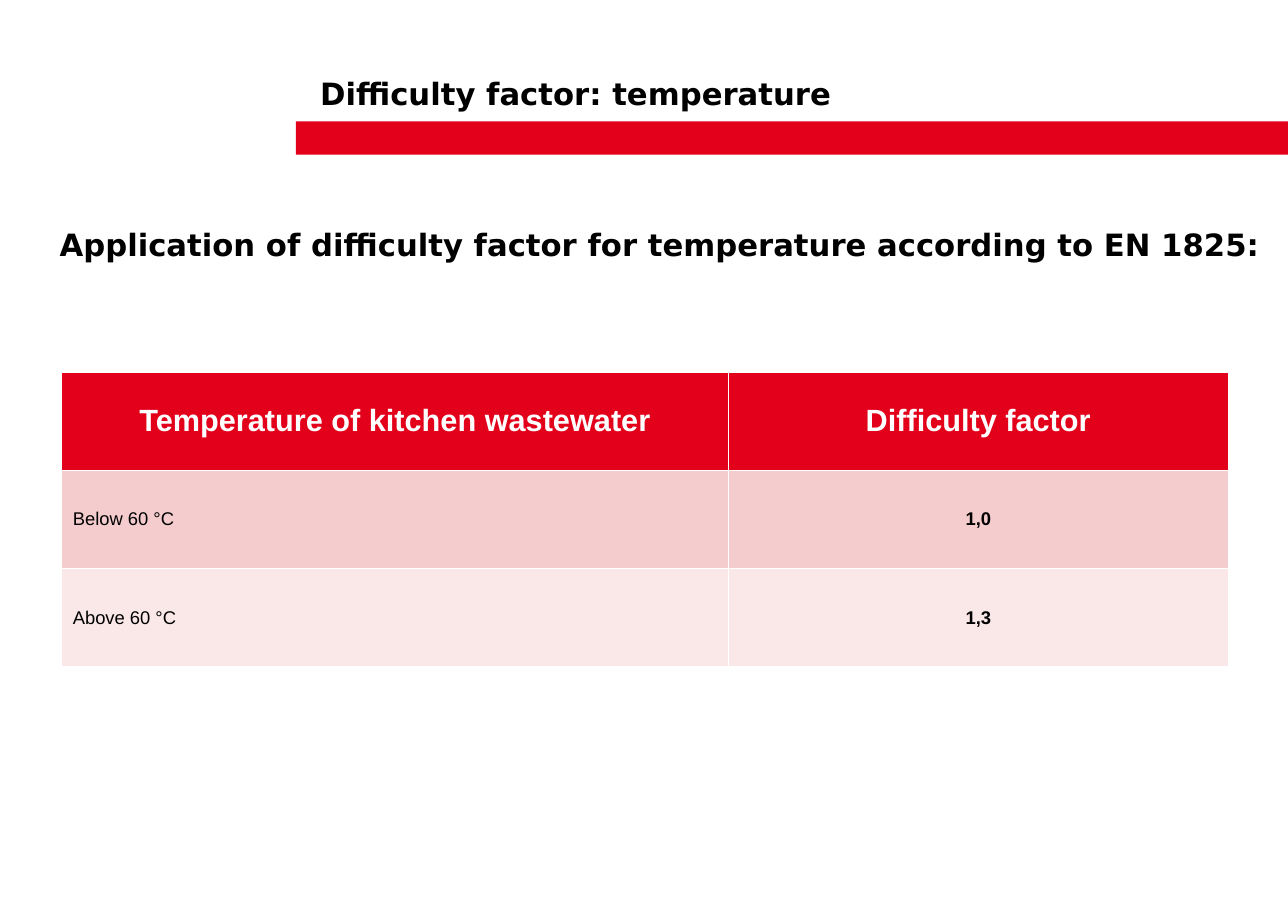
from dataclasses import dataclass

from pptx import Presentation
from pptx.dml.color import RGBColor
from pptx.enum.shapes import MSO_SHAPE as Preset
from pptx.enum.text import MSO_ANCHOR as Anchor, MSO_AUTO_SIZE as AutoSize, PP_ALIGN as Align
from pptx.util import Inches, Pt


@dataclass(frozen=True)
class Theme:
    red: str = "E2001A"
    rows: tuple = ("F4CCCD", "FAE7E8")
    ink: str = "000000"
    white: str = "FFFFFF"
    heading_font: str = "DejaVu Sans"
    table_font: str = "Arial"
    heading_size: int = 20
    entry_size: int = 12


THEME = Theme()
COLUMN_WIDTHS = (6.04, 4.53)
ROW_HEIGHT = 0.89
FACTORS = (
    ("Temperature of kitchen wastewater", "Difficulty factor"),
    ("Below 60 °C", "1,0"),
    ("Above 60 °C", "1,3"),
)


def paint(target, color):
    target.fill.solid()
    target.fill.fore_color.rgb = RGBColor.from_string(color)


def style_text(paragraph, font_name, size, color, bold, align):
    paragraph.alignment = align
    for run in paragraph.runs:
        run.font.name = font_name
        run.font.size = Pt(size)
        run.font.bold = bold
        run.font.color.rgb = RGBColor.from_string(color)


def set_heading(heading, text, anchor):
    frame = heading.text_frame
    frame.text = text
    frame.word_wrap = True
    frame.auto_size = AutoSize.NONE
    frame.vertical_anchor = anchor
    paragraph = frame.paragraphs[0]
    paragraph.line_spacing = 1.1
    style_text(paragraph, THEME.heading_font, THEME.heading_size, THEME.ink, True, Align.LEFT)


def add_red_bar(slide):
    bar = slide.shapes.add_shape(
        Preset.RECTANGLE, Inches(2.68), Inches(1.1), Inches(8.99), Inches(0.3))
    bar.shadow.inherit = False
    paint(bar, THEME.red)
    bar.line.fill.background()


def set_title(slide, text):
    title = slide.shapes.title
    title.left, title.top = Inches(2.8), Inches(0.4)
    title.width, title.height = Inches(8.86), Inches(0.86)
    set_heading(title, text, Anchor.MIDDLE)


def add_subtitle(slide, text):
    subtitle = slide.shapes.add_textbox(
        Inches(0.54), Inches(1.81), Inches(10.91), Inches(0.57))
    frame = subtitle.text_frame
    frame.margin_left = frame.margin_right = frame.margin_top = frame.margin_bottom = 0
    set_heading(subtitle, text, Anchor.BOTTOM)


def fill_cell(cell, text, row, column):
    is_header = row == 0
    cell.text_frame.text = text
    cell.vertical_anchor = Anchor.MIDDLE
    paint(cell, THEME.red if is_header else THEME.rows[(row - 1) % len(THEME.rows)])
    style_text(
        cell.text_frame.paragraphs[0],
        THEME.table_font,
        THEME.heading_size if is_header else THEME.entry_size,
        THEME.white if is_header else THEME.ink,
        is_header or column == 1,
        Align.CENTER if is_header or column == 1 else Align.LEFT,
    )


def add_factor_table(slide):
    factors = slide.shapes.add_table(
        len(FACTORS), len(COLUMN_WIDTHS), Inches(0.56), Inches(3.37),
        Inches(sum(COLUMN_WIDTHS)), Inches(ROW_HEIGHT * len(FACTORS))).table
    for column, width in zip(factors.columns, COLUMN_WIDTHS):
        column.width = Inches(width)
    for row, entries in enumerate(FACTORS):
        factors.rows[row].height = Inches(ROW_HEIGHT)
        for column, text in enumerate(entries):
            fill_cell(factors.cell(row, column), text, row, column)


def main():
    deck = Presentation()
    deck.slide_width, deck.slide_height = Inches(11.67), Inches(8.25)
    slide = deck.slides.add_slide(deck.slide_layouts.get_by_name("Title Only"))
    add_red_bar(slide)
    set_title(slide, "Difficulty factor: temperature")
    add_subtitle(slide, "Application of difficulty factor for temperature according to EN 1825:")
    add_factor_table(slide)
    deck.save("out.pptx")


if __name__ == "__main__":
    main()
